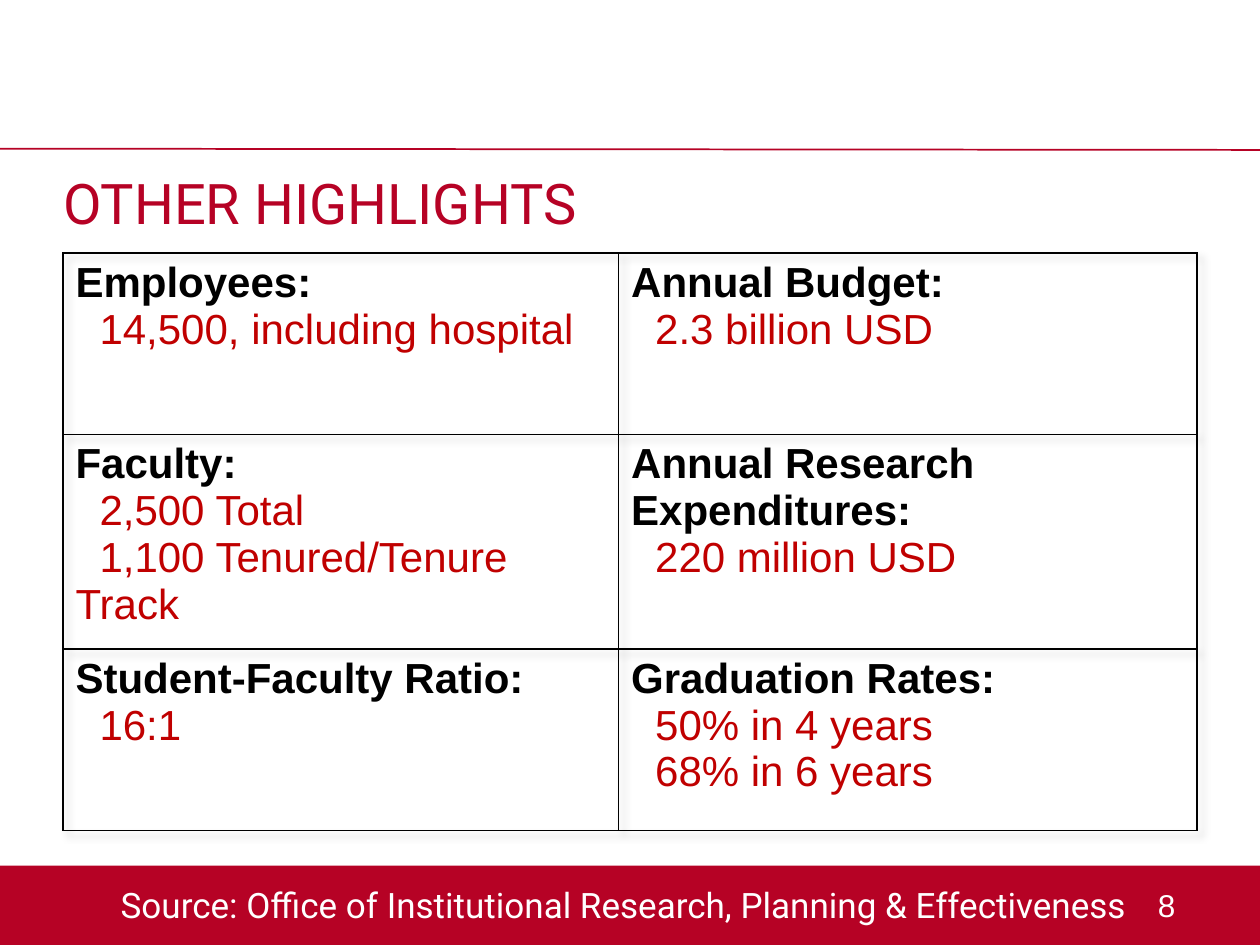
from dataclasses import dataclass

from lxml import etree
from pptx import Presentation
from pptx.dml.color import RGBColor
from pptx.enum import shapes, text
from pptx.oxml import ns
from pptx.util import Inches, Pt


@dataclass(frozen=True)
class Theme:
    crimson: RGBColor = RGBColor(0xB6, 0x02, 0x25)
    red: RGBColor = RGBColor(0xC0, 0x00, 0x00)
    black: RGBColor = RGBColor(0, 0, 0)
    white: RGBColor = RGBColor(255, 255, 255)
    heading_font: str = "Roboto"
    body_font: str = "Arial"
    title_size: int = 32
    table_size: int = 24
    source_size: int = 20
    number_size: int = 18


THEME = Theme()

HIGHLIGHTS = [
    [("Employees:", ["14,500, including hospital"]),
     ("Annual Budget:", ["2.3 billion USD"])],
    [("Faculty:", ["2,500 Total", "1,100 Tenured/Tenure Track"]),
     ("Annual Research Expenditures:", ["220 million USD"])],
    [("Student-Faculty Ratio:", ["16:1"]),
     ("Graduation Rates:", ["50% in 4 years", "68% in 6 years"])],
]


def style_paragraph(para, font, size, color, bold=False):
    for span in para.runs:
        span.font.name = font
        span.font.size = Pt(size)
        span.font.color.rgb = color
        span.font.bold = bold


def place(box, left, top, width, height):
    box.left, box.top = Inches(left), Inches(top)
    box.width, box.height = Inches(width), Inches(height)


def add_title(page, words):
    title = page.shapes.title
    place(title, 0.5, 1.29, 9, 0.87)
    frame = title.text_frame
    frame.text = words
    frame.margin_left = frame.margin_right = 0
    frame.vertical_anchor = text.MSO_ANCHOR.TOP
    para = frame.paragraphs[0]
    para.alignment = text.PP_ALIGN.LEFT
    style_paragraph(para, THEME.heading_font, THEME.title_size, THEME.crimson)


def add_rule(page):
    rule = page.shapes.add_connector(
        shapes.MSO_CONNECTOR.STRAIGHT,
        Inches(0), Inches(1.18), Inches(10), Inches(1.19))
    rule.line.color.rgb = THEME.crimson
    rule.line.width = Pt(1)
    etree.SubElement(rule._element.spPr, ns.qn("a:effectLst"))


def add_footer_bar(page):
    bar = page.shapes.add_shape(
        shapes.MSO_SHAPE.RECTANGLE,
        Inches(0), Inches(6.87), Inches(10), Inches(0.63))
    bar.shadow.inherit = False
    bar.fill.solid()
    bar.fill.fore_color.rgb = THEME.crimson
    bar.line.fill.background()


def add_footer_text(page, words, bounds, font, size, alignment):
    box = page.shapes.add_textbox(0, 0, 0, 0)
    place(box, *bounds)
    frame = box.text_frame
    frame.word_wrap = True
    frame.text = words
    para = frame.paragraphs[0]
    para.alignment = alignment
    style_paragraph(para, font, size, THEME.white)
    return frame


def add_borders(cell):
    properties = cell._tc.get_or_add_tcPr()
    for position, side in enumerate(("lnL", "lnR", "lnT", "lnB")):
        line = etree.Element(ns.qn(f"a:{side}"), w=str(Pt(1)))
        fill = etree.SubElement(line, ns.qn("a:solidFill"))
        etree.SubElement(fill, ns.qn("a:srgbClr"), val=str(THEME.black))
        properties.insert(position, line)


def add_table_shadow(table):
    effects = etree.Element(ns.qn("a:effectLst"))
    shadow = etree.SubElement(
        effects, ns.qn("a:outerShdw"),
        blurRad=str(Pt(4)), dist=str(Pt(4)), dir="2700000")
    color = etree.SubElement(shadow, ns.qn("a:srgbClr"), val=str(THEME.black))
    etree.SubElement(color, ns.qn("a:alpha"), val="20000")
    table._tbl.tblPr.insert(0, effects)


def fill_cell(cell, label, facts):
    """Write a bold label, then each fact with its first line indented."""
    cell.fill.background()
    add_borders(cell)
    frame = cell.text_frame
    frame.text = "\n".join([label, *facts])
    heading, *details = frame.paragraphs
    style_paragraph(heading, THEME.body_font, THEME.table_size,
                    THEME.black, bold=True)
    for para in details:
        para._p.get_or_add_pPr().set("indent", str(Inches(0.19)))
        style_paragraph(para, THEME.body_font, THEME.table_size, THEME.red)


def add_highlights_table(page):
    table = page.shapes.add_table(
        len(HIGHLIGHTS), len(HIGHLIGHTS[0]),
        Inches(0.5), Inches(2.01), Inches(9), Inches(4.52)).table
    table.first_row = table.horz_banding = False
    for column, width in zip(table.columns, (4.41, 4.59)):
        column.width = Inches(width)
    for row, height in zip(table.rows, (1.44, 1.64, 1.44)):
        row.height = Inches(height)
    for row, entries in zip(table.rows, HIGHLIGHTS):
        for cell, (label, facts) in zip(row.cells, entries):
            fill_cell(cell, label, facts)
    add_table_shadow(table)


def main():
    deck = Presentation()
    deck.slide_width, deck.slide_height = Inches(10), Inches(7.5)
    page = deck.slides.add_slide(deck.slide_layouts.get_by_name("Title Only"))
    add_footer_bar(page)
    add_rule(page)
    add_footer_text(page, "8", (9.09, 6.98, 0.61, 0.4), THEME.body_font,
                    THEME.number_size, text.PP_ALIGN.LEFT)
    source = add_footer_text(
        page,
        "Source: Office of Institutional Research, Planning & Effectiveness",
        (0, 6.96, 10, 0.54), THEME.heading_font, THEME.source_size,
        text.PP_ALIGN.CENTER)
    source.margin_left = 0
    add_title(page, "OTHER HIGHLIGHTS")
    add_highlights_table(page)
    deck.save("out.pptx")


if __name__ == "__main__":
    main()
